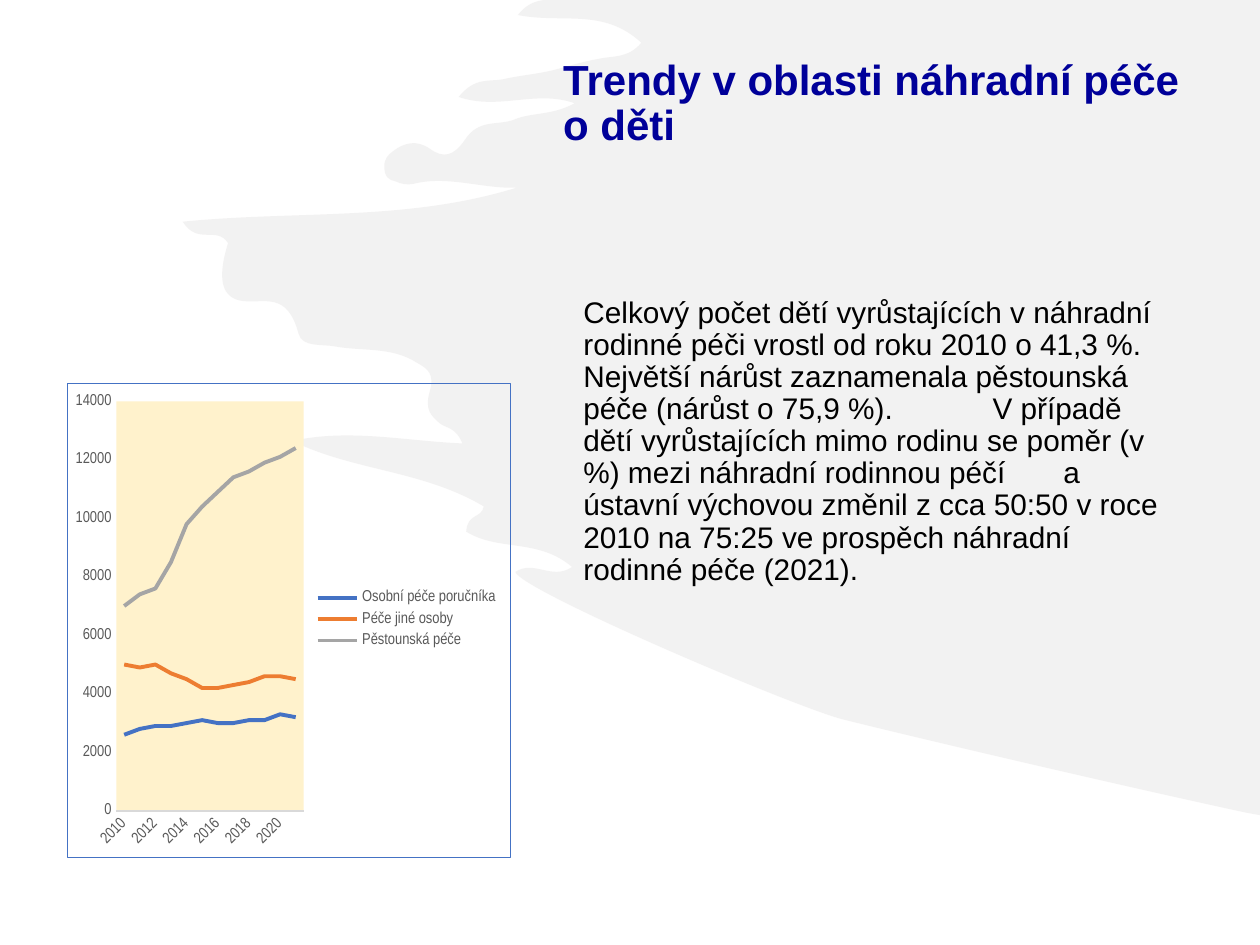
from lxml.etree import SubElement
from pptx import Presentation
from pptx.chart.data import CategoryChartData
from pptx.dml.color import RGBColor
from pptx.enum.chart import XL_CHART_TYPE, XL_LEGEND_POSITION, XL_MARKER_STYLE, XL_TICK_MARK
from pptx.enum.text import MSO_ANCHOR, MSO_AUTO_SIZE, PP_ALIGN
from pptx.oxml import parse_xml
from pptx.oxml.ns import nsdecls, qn
from pptx.util import Pt

SCALE = 9144
COLORS = {
    "map": "E7E6E6", "title": "000099", "body": "000000", "label": "595959",
    "axis": "D9D9D9", "plot": "FFF2CC", "border": "4472C4",
    "guardian": "4472C4", "other": "ED7D31", "foster": "A5A5A5",
}
MAP_START = (1000, 0)
MAP_COAST = (432, 0)
MAP_CURVES = [
    (425, 1, 418, 3, 411, 12), (446, 19, 479, 6, 509, 34), (498, 47, 486, 44, 474, 47),
    (462, 49, 450, 53, 438, 56), (425, 59, 412, 60, 399, 63), (388, 65, 377, 61, 364, 77),
    (396, 88, 425, 71, 456, 82), (438, 92, 422, 89, 408, 95), (395, 100, 380, 94, 369, 111),
    (360, 124, 352, 126, 341, 118), (331, 111, 321, 113, 312, 120), (308, 123, 305, 126, 305, 132),
    (305, 141, 309, 143, 314, 144), (318, 146, 323, 147, 328, 146), (355, 139, 383, 150, 410, 149),
    (323, 176, 235, 167, 145, 176), (157, 195, 172, 179, 181, 193), (172, 222, 176, 237, 193, 239),
    (210, 241, 228, 231, 237, 265), (240, 276, 256, 273, 266, 275), (288, 279, 311, 275, 331, 288),
    (340, 293, 345, 297, 341, 311), (337, 325, 342, 330, 349, 336), (354, 340, 362, 339, 367, 352),
    (321, 350, 277, 340, 232, 350), (281, 374, 335, 373, 384, 402), (382, 412, 371, 407, 370, 422),
    (396, 438, 427, 427, 454, 450), (438, 461, 424, 444, 409, 454), (414, 469, 630, 561, 669, 571),
    (733, 587, 896, 625, 989, 645),
]
MAP_END = (1000, 647)
YEARS = [str(year) for year in range(2010, 2022)]
SERIES = [
    ("Osobní péče poručníka", "guardian",
     [2600, 2800, 2900, 2900, 3000, 3100, 3000, 3000, 3100, 3100, 3300, 3200]),
    ("Péče jiné osoby", "other",
     [5000, 4900, 5000, 4700, 4500, 4200, 4200, 4300, 4400, 4600, 4600, 4500]),
    ("Pěstounská péče", "foster",
     [7000, 7400, 7600, 8500, 9800, 10400, 10900, 11400, 11600, 11900, 12100, 12400]),
]
TITLE = "Trendy v oblasti náhradní péče o děti"
BODY = [
    ("Celkový počet dětí vyrůstajících v náhradní rodinné péči vrostl od roku 2010 o 41,3 %. "
     "Největší nárůst zaznamenala pěstounská péče (nárůst o 75,9 %).", 0),
    (" ", 52),
    ("V případě dětí vyrůstajících mimo rodinu se poměr (v %) mezi náhradní rodinnou péčí", 0),
    (" ", 28),
    ("a ústavní výchovou změnil z cca 50:50 v roce 2010 na 75:25 ve prospěch náhradní "
     "rodinné péče (2021).", 0),
]


def px(value):
    return round(value * SCALE)


def rgb(name):
    return RGBColor.from_string(COLORS[name])


def format_font(font, size, color, name, bold=False):
    font.size, font.name, font.bold = Pt(size), name, bold
    font.color.rgb = rgb(color)


def write_text(paragraph, pieces, *, size, color, font="Arial", bold=False, before=0, after=0):
    paragraph.alignment = PP_ALIGN.LEFT
    paragraph.line_spacing = 0.9
    paragraph.space_before, paragraph.space_after = Pt(before), Pt(after)
    properties = paragraph._p.get_or_add_pPr()
    properties.set("marL", "0")
    properties.set("indent", "0")
    SubElement(properties, qn("a:buNone"))
    for text, spacing in pieces:
        run = paragraph.add_run()
        run.text = text
        format_font(run.font, size, color, font, bold)
        if spacing:
            run._r.get_or_add_rPr().set("spc", str(spacing * 100))


def add_layout(parent, position, frame, box, inner=False):
    layout = SubElement(parent, qn("c:layout"))
    parent.insert(position, layout)
    manual = SubElement(layout, qn("c:manualLayout"))
    settings = {"layoutTarget": "inner"} if inner else {}
    settings.update(xMode="edge", yMode="edge")
    left, top, width, height = frame
    settings["x"] = (box[0] - left) / width
    settings["y"] = (box[1] - top) / height
    settings["w"], settings["h"] = box[2] / width, box[3] / height
    for tag, value in settings.items():
        SubElement(manual, qn(f"c:{tag}"), val=str(value))


class SlideBuilder:
    """Hold the text style and the current slide, and add each kind of element."""

    def __init__(self, slide, chart_font):
        self.slide = slide
        self.chart_font = chart_font

    def add_map(self, start, coast, curves, end, color, opacity):
        corners = [coast, *(curve[4:] for curve in curves), end]
        builder = self.slide.shapes.build_freeform(px(start[0]), px(start[1]), scale=1.0)
        builder.add_line_segments([(px(x), px(y)) for x, y in corners], close=True)
        shape = builder.convert_to_shape()
        segments = list(shape.element.spPr.iter(qn("a:lnTo")))[1:]
        for segment, curve in zip(segments, curves):
            bezier = SubElement(segment.getparent(), qn("a:cubicBezTo"))
            for x, y in zip(curve[::2], curve[1::2]):
                SubElement(bezier, qn("a:pt"), x=str(px(x) - shape.left), y=str(px(y) - shape.top))
            segment.getparent().replace(segment, bezier)
        shape.shadow.inherit = False
        shape.fill.solid()
        shape.fill.fore_color.rgb = rgb(color)
        shape.line.fill.background()
        color_element = next(shape.element.spPr.iter(qn("a:srgbClr")))
        SubElement(color_element, qn("a:alpha"), val=str(opacity * 1000))
        self.slide.shapes.element.insert(2, shape.element)

    def fill_placeholder(self, index, box, pieces, margin_top=5, **text_format):
        shape = self.slide.placeholders[index]
        shape.left, shape.top, shape.width, shape.height = map(px, box)
        frame = shape.text_frame
        frame.word_wrap = True
        frame.auto_size = MSO_AUTO_SIZE.NONE
        frame.vertical_anchor = MSO_ANCHOR.TOP
        frame.margin_top = px(margin_top)
        write_text(frame.paragraphs[0], pieces, **text_format)

    def format_axis(self, axis):
        axis.has_major_gridlines = False
        axis.major_tick_mark = axis.minor_tick_mark = XL_TICK_MARK.NONE
        format_font(axis.tick_labels.font, 9, "label", self.chart_font)

    def add_line_chart(self, box, plot_box, legend_box, categories, series_rows):
        data = CategoryChartData()
        data.categories = categories
        for name, _, values in series_rows:
            data.add_series(name, values)
        chart = self.slide.shapes.add_chart(XL_CHART_TYPE.LINE, *map(px, box), data).chart
        format_font(chart.font, 9, "body", self.chart_font)
        chart.has_title = False
        chart.has_legend = True
        chart.legend.position = XL_LEGEND_POSITION.RIGHT
        chart.legend.include_in_layout = False
        format_font(chart.legend.font, 9, "label", self.chart_font)

        for axis in (chart.category_axis, chart.value_axis):
            self.format_axis(axis)
        chart.category_axis.format.line.color.rgb = rgb("axis")
        chart.category_axis.format.line.width = Pt(0.75)
        label_body = chart.category_axis._element.find(qn("c:txPr")).find(qn("a:bodyPr"))
        label_body.set("rot", "-2700000")
        label_body.set("vert", "horz")
        chart.value_axis.format.line.fill.background()
        chart.value_axis.minimum_scale, chart.value_axis.maximum_scale = 0, 14000
        chart.value_axis.major_unit = 2000

        for series, (_, color, _) in zip(chart.plots[0].series, series_rows):
            series.smooth = False
            series.marker.style = XL_MARKER_STYLE.NONE
            series.format.line.color.rgb = rgb(color)
            series.format.line.width = Pt(2.25)
        self.style_areas(chart, box, plot_box, legend_box)

    def style_areas(self, chart, box, plot_box, legend_box):
        chart_element = chart._chartSpace.find(qn("c:chart"))
        chart_element.addnext(parse_xml(
            f'<c:spPr {nsdecls("c", "a")}><a:noFill/><a:ln w="{Pt(0.75)}"><a:solidFill>'
            f'<a:srgbClr val="{COLORS["border"]}"/></a:solidFill></a:ln></c:spPr>'))
        plot_area = chart_element.find(qn("c:plotArea"))
        legend = chart_element.find(qn("c:legend"))
        for parent in (plot_area, legend):
            for layout in parent.findall(qn("c:layout")):
                parent.remove(layout)
        add_layout(plot_area, 0, box, plot_box, inner=True)
        add_layout(legend, 1, box, legend_box)
        plot_area.append(parse_xml(
            f'<c:spPr {nsdecls("c", "a")}><a:solidFill><a:srgbClr val="{COLORS["plot"]}"/>'
            '</a:solidFill><a:ln><a:noFill/></a:ln></c:spPr>'))


def main():
    presentation = Presentation()
    presentation.slide_width, presentation.slide_height = px(1000), px(750)
    slide = presentation.slides.add_slide(presentation.slide_layouts[1])
    builder = SlideBuilder(slide, chart_font="Arial Narrow")
    builder.add_map(MAP_START, MAP_COAST, MAP_CURVES, MAP_END, "map", 50)
    builder.fill_placeholder(0, (437, 40, 528, 122), [(TITLE, 0)], margin_top=7,
                             size=24, color="title", bold=True)
    builder.fill_placeholder(1, (453, 231, 478, 451), BODY, size=17, color="body",
                             before=7.5, after=2)
    builder.add_line_chart((53, 304, 353, 377), (92, 318, 149, 326), (247, 464, 152, 55),
                           YEARS, SERIES)
    presentation.save("out.pptx")


if __name__ == "__main__":
    main()
